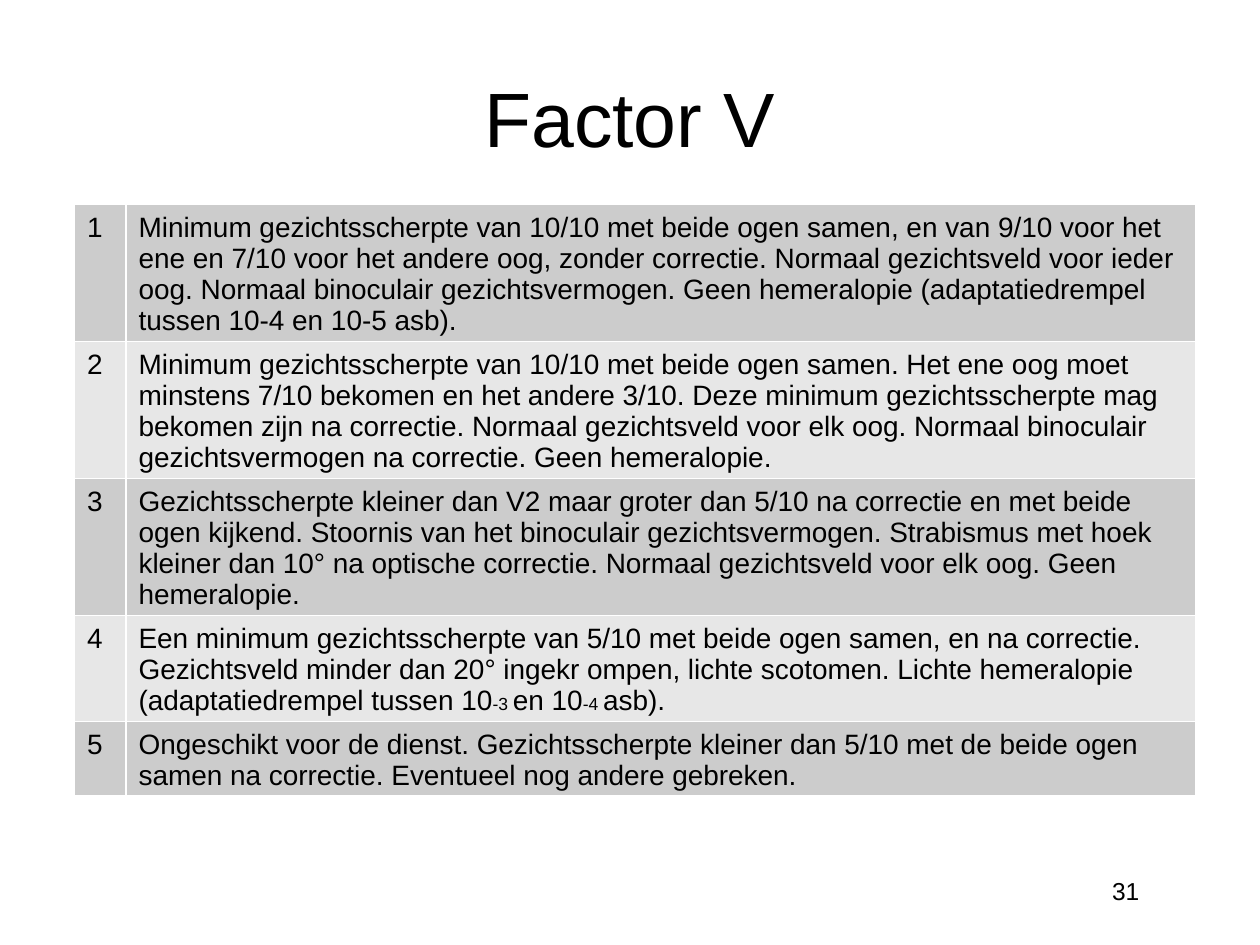
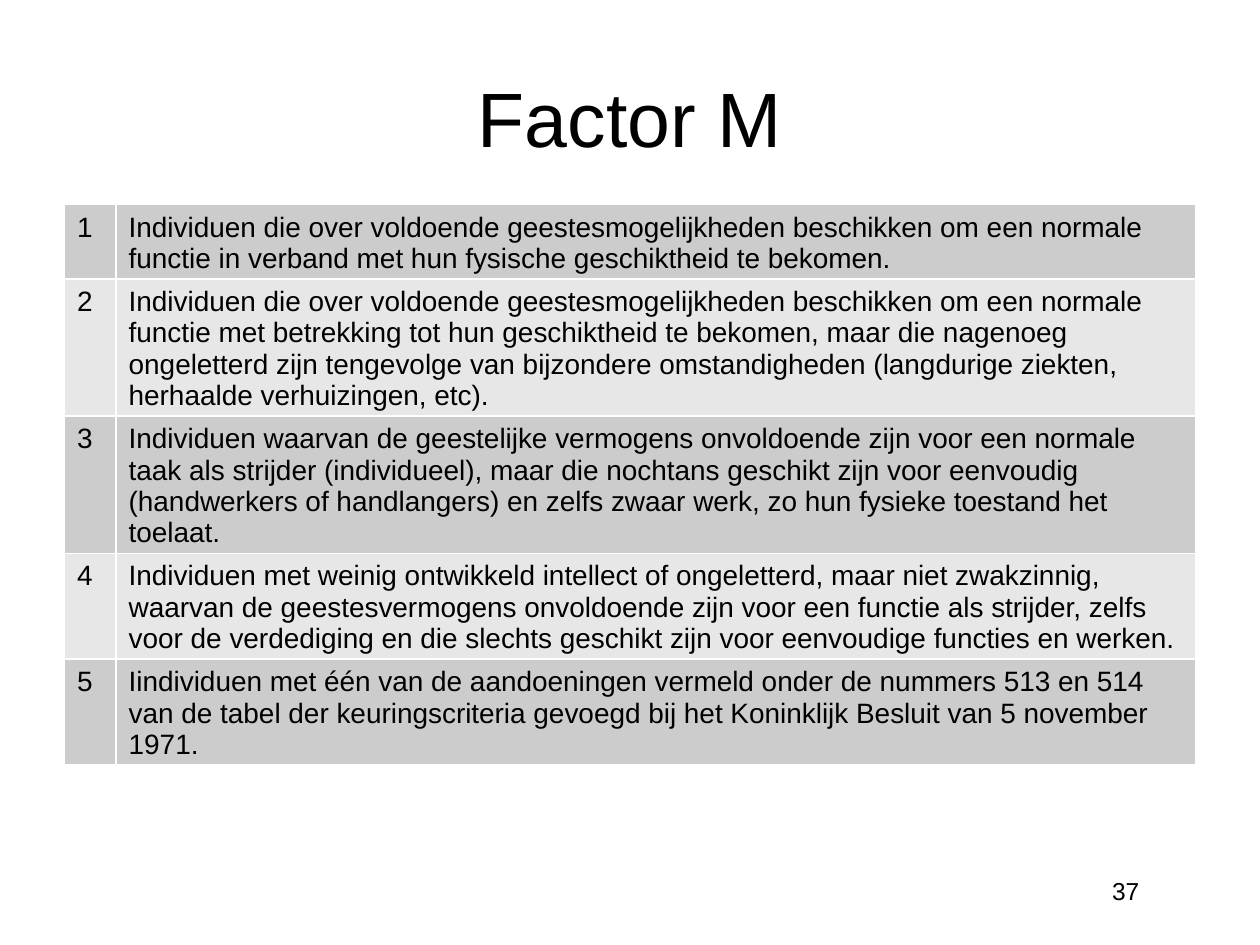
from dataclasses import dataclass

from lxml import etree
from pptx import Presentation
from pptx import util as u
from pptx.dml.color import RGBColor
from pptx.enum import text as t
from pptx.oxml import ns


@dataclass(frozen=True)
class Theme:
    font: str = "Arial"
    ink: str = "000000"
    rule: str = "FFFFFF"
    bands: tuple = ("CCCCCC", "E7E7E7")
    title: int = 44
    body: int = 16
    small: int = 10
    page: int = 14
    pitch: float = 17.8  # line pitch inside the table


THEME = Theme()

# Boxes in cm: left, top, width, height
TITLE = (1.27, 0.76, 22.86, 3.18)
PAGE = (17.3, 17.53, 5.92, 1.32)
GRID_TOP, GRID_RIGHT = 4.12, 24.1
KEY = 1.04  # width of the grade column and least row height

# A grade is a string, or a list of paragraphs;
# a tuple alternates body-size and small runs.
VISION = [
    ["Minimum gezichtsscherpte van 10/10 met beide ogen samen, en van 9/10 voor het "
     "ene en 7/10 voor het andere oog, zonder correctie. Normaal gezichtsveld voor ieder "
     "oog. Normaal binoculair gezichtsvermogen. Geen hemeralopie (adaptatiedrempel",
     "tussen 10-4 en 10-5 asb)."],
    "Minimum gezichtsscherpte van 10/10 met beide ogen samen. Het ene oog moet "
    "minstens 7/10 bekomen en het andere 3/10. Deze minimum gezichtsscherpte mag "
    "bekomen zijn na correctie. Normaal gezichtsveld voor elk oog. Normaal binoculair "
    "gezichtsvermogen na correctie. Geen hemeralopie.",
    ["Gezichtsscherpte kleiner dan V2 maar groter dan 5/10 na correctie en met beide "
     "ogen kijkend. Stoornis van het binoculair gezichtsvermogen. Strabismus met hoek "
     "kleiner dan 10° na optische correctie. Normaal gezichtsveld voor elk oog. Geen",
     "hemeralopie."],
    [("Een minimum gezichtsscherpte van 5/10 met beide ogen samen, en na correctie. "
      "Gezichtsveld minder dan 20° ingekr ompen, lichte scotomen. Lichte hemeralopie "
      "(adaptatiedrempel tussen 10", "-3 ", "en 10", "-4 ", "asb).")],
    "Ongeschikt voor de dienst. Gezichtsscherpte kleiner dan 5/10 met de beide ogen "
    "samen na correctie. Eventueel nog andere gebreken.",
]
MIND = [
    "Individuen die over voldoende geestesmogelijkheden beschikken om een normale "
    "functie in verband met hun fysische geschiktheid te bekomen.",
    "Individuen die over voldoende geestesmogelijkheden beschikken om een normale "
    "functie met betrekking tot hun geschiktheid te bekomen, maar die nagenoeg "
    "ongeletterd zijn tengevolge van bijzondere omstandigheden (langdurige ziekten, "
    "herhaalde verhuizingen, etc).",
    "Individuen waarvan de geestelijke vermogens onvoldoende zijn voor een normale "
    "taak als strijder (individueel), maar die nochtans geschikt zijn voor eenvoudig "
    "(handwerkers of handlangers) en zelfs zwaar werk, zo hun fysieke toestand het "
    "toelaat.",
    "Individuen met weinig ontwikkeld intellect of ongeletterd, maar niet zwakzinnig, "
    "waarvan de geestesvermogens onvoldoende zijn voor een functie als strijder, zelfs "
    "voor de verdediging en die slechts geschikt zijn voor eenvoudige functies en werken.",
    "Iindividuen met één van de aandoeningen vermeld onder de nummers 513 en 514 "
    "van de tabel der keuringscriteria gevoegd bij het Koninklijk Besluit van 5 november "
    "1971.",
]


def write(frame, copy, size=THEME.body, align=t.PP_ALIGN.LEFT, pitch=None):
    """Fill a text frame with one or more paragraphs."""
    frame.word_wrap = True
    for i, para in enumerate(copy if isinstance(copy, list) else [copy]):
        p = frame.add_paragraph() if i else frame.paragraphs[0]
        p.alignment = align
        if pitch:
            p.line_spacing = u.Pt(pitch)
        for j, part in enumerate(para if isinstance(para, tuple) else (para,)):
            run = p.add_run()
            run.text = part
            font = run.font
            font.name, font.bold = THEME.font, False
            font.size = u.Pt(THEME.small if j % 2 else size)
            font.color.rgb = RGBColor.from_string(THEME.ink)


def label(slide, box, copy, anchor=t.MSO_ANCHOR.TOP, **style):
    frame = slide.shapes.add_textbox(*map(u.Cm, box)).text_frame
    write(frame, copy, **style)
    frame.vertical_anchor = anchor


def paint(cell, color):
    """Give a cell thin rules on all sides and a plain fill."""
    props = cell._tc.get_or_add_tcPr()
    for side in ("lnL", "lnR", "lnT", "lnB"):
        line = etree.SubElement(props, ns.qn("a:" + side), w=str(u.Pt(1)))
        fill = etree.SubElement(line, ns.qn("a:solidFill"))
        etree.SubElement(fill, ns.qn("a:srgbClr"), val=THEME.rule)
    cell.fill.solid()
    cell.fill.fore_color.rgb = RGBColor.from_string(color)
    cell.margin_top, cell.margin_bottom = u.Cm(0.15), u.Cm(0.1)


def grades(slide, left, height, rows):
    """Place the numbered grades from left to the shared right edge."""
    width = GRID_RIGHT - left
    box = (left, GRID_TOP, width, KEY * len(rows))
    frame = slide.shapes.add_table(len(rows), 2, *map(u.Cm, box))
    table = frame.table
    table.first_row = table.horz_banding = False
    table.columns[0].width = u.Cm(KEY)
    table.columns[1].width = u.Cm(width - KEY)
    for i, copy in enumerate(rows):
        for cell, words in zip(table.rows[i].cells, (str(i + 1), copy)):
            paint(cell, THEME.bands[i % 2])
            write(cell.text_frame, words, pitch=THEME.pitch)
    frame.height = u.Cm(height)  # rows grow with their text


def factor(deck, name, left, height, rows, page):
    slide = deck.slides.add_slide(deck.slide_layouts[6])
    # Title
    label(slide, TITLE, name, anchor=t.MSO_ANCHOR.MIDDLE,
          size=THEME.title, align=t.PP_ALIGN.CENTER)
    # Grades
    grades(slide, left, height, rows)
    # Page number
    label(slide, PAGE, page, size=THEME.page, align=t.PP_ALIGN.RIGHT)


def main():
    deck = Presentation()
    deck.slide_width, deck.slide_height = u.Cm(25.4), u.Cm(19.05)
    factor(deck, "Factor V", 1.5, 12.78, VISION, "31")
    factor(deck, "Factor M", 1.3, 12.12, MIND, "37")
    deck.save("out.pptx")


if __name__ == "__main__":
    main()
